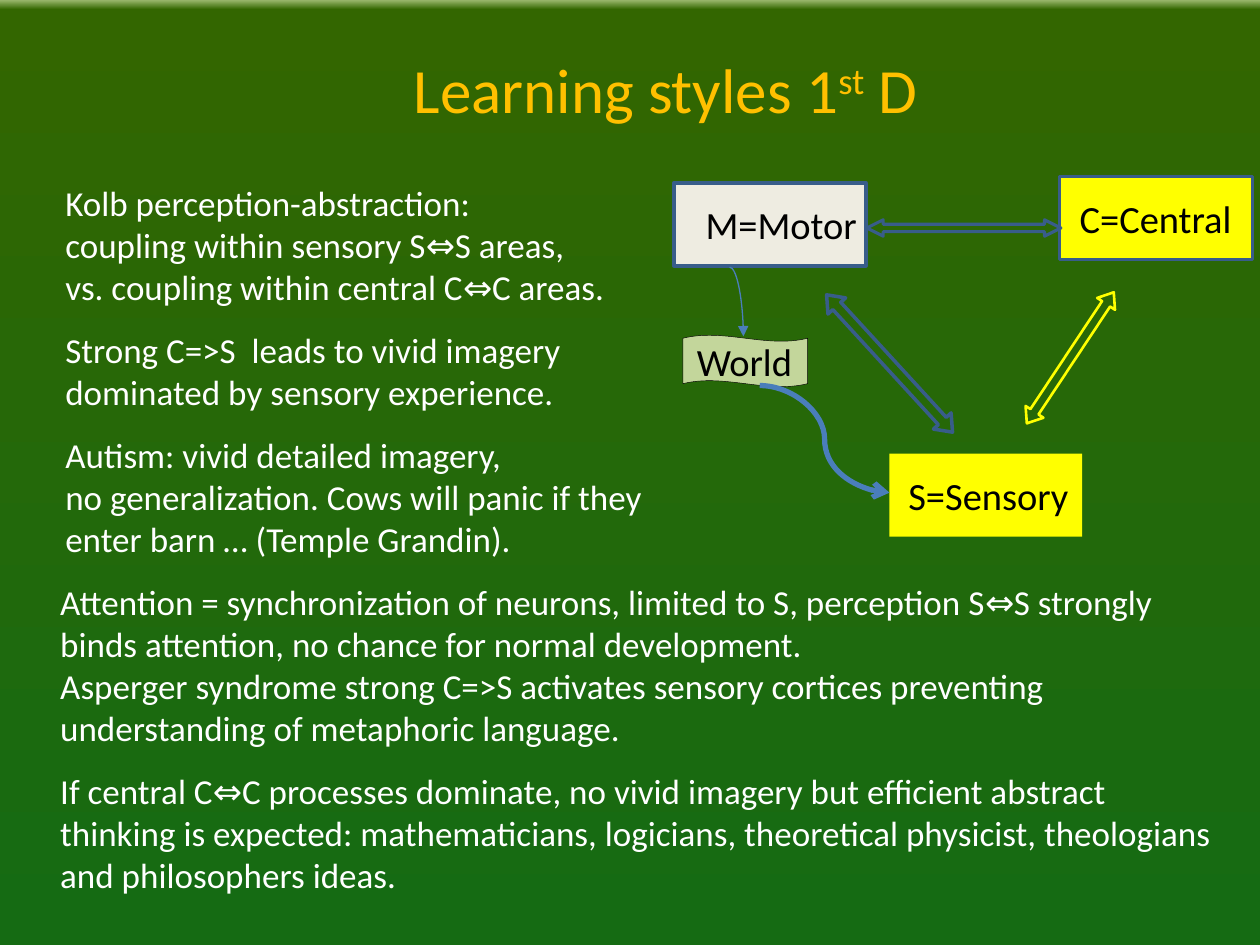
import math

from lxml import etree
from pptx import Presentation
from pptx.dml.color import RGBColor
from pptx.enum.shapes import MSO_CONNECTOR, MSO_SHAPE
from pptx.enum.text import MSO_ANCHOR, PP_ALIGN
from pptx.oxml.ns import qn
from pptx.util import Inches, Pt

RECTANGLE, WAVE = MSO_SHAPE.RECTANGLE, MSO_SHAPE.WAVE
DOUBLE_ARROW = MSO_SHAPE.LEFT_RIGHT_ARROW
CURVE = MSO_CONNECTOR.CURVE
MIDDLE, TOP = MSO_ANCHOR.MIDDLE, MSO_ANCHOR.TOP
LEFT, CENTER = PP_ALIGN.LEFT, PP_ALIGN.CENTER

FONT = "Calibri"
WHITE = RGBColor(0xFF, 0xFF, 0xFF)
BLACK = RGBColor(0x00, 0x00, 0x00)
GOLD = RGBColor(0xFF, 0xC0, 0x00)
YELLOW = RGBColor(0xFF, 0xFF, 0x00)
CREAM = RGBColor(0xEE, 0xEC, 0xE1)
SAGE = RGBColor(0xC3, 0xD6, 0x9B)
NAVY = RGBColor(0x38, 0x5D, 0x8A)
BLUE = RGBColor(0x4A, 0x7E, 0xBB)
BACKGROUND = [(0, "9CB86E"), (1, "336600"), (99, "156B13"), (100, "156B13")]

TITLE_BOX = (2.01, 0.28, 6.66, 0.84)
TITLE_RUNS = [("Learning styles 1", 0), ("st", 30000), (" D ", 0)]

# Box, then paragraphs made of lines
TEXTS = [
    ((0.42, 1.39, 4.92, 3.36), [
        ["Kolb perception-abstraction: ",
         "coupling within sensory S⇔S areas, ",
         "vs. coupling within central C⇔C areas."],
        ["Strong C=>S  leads to vivid imagery dominated by sensory experience."],
        ["Autism: vivid detailed imagery, ",
         "no generalization. Cows will panic if they",
         "enter barn … (Temple Grandin)."],
    ]),
    ((0.38, 4.56, 9.34, 2.93), [
        ["Attention = synchronization of neurons, limited to S, perception S⇔S "
         "strongly binds attention, no chance for normal development. ",
         "Asperger syndrome strong C=>S activates sensory cortices preventing "
         "understanding of metaphoric language."],
        ["If central C⇔C processes dominate, no vivid imagery but efficient abstract "
         "thinking is expected: mathematicians, logicians, theoretical physicist, "
         "theologians and philosophers ideas."],
    ]),
]

# Label, preset, box, left inset of the label, fill, line, line width
NODES = [
    ("S=Sensory", RECTANGLE, (7.06, 3.6, 1.53, 0.66), 0.15, YELLOW, None, 0),
    ("C=Central", RECTANGLE, (8.41, 1.4, 1.53, 0.66), 0.16, YELLOW, NAVY, 2),
    ("M=Motor", RECTANGLE, (5.35, 1.45, 1.52, 0.66), 0.25, CREAM, NAVY, 2.25),
    ("World", WAVE, (5.42, 2.66, 0.99, 0.41), 0.11, SAGE, BLACK, 0.25),
]

# Two tips, thickness, head length, line colour, line width
COUPLINGS = [
    ((8.15, 3.36), (8.84, 2.32), 0.17, 0.11, YELLOW, 1.5),
    ((6.56, 2.34), (7.56, 3.43), 0.19, 0.12, NAVY, 2),
    ((6.88, 1.81), (8.42, 1.81), 0.13, 0.13, NAVY, 1.75),
]

# Start, end, preset, arrowhead, line width
FLOWS = [
    ((5.79, 2.12), (5.9, 2.67), "curvedConnector2", "triangle", 0.75),
    ((6.03, 3.06), (7.06, 3.91), "curvedConnector3", "arrow", 3),
]


def inches(values):
    return [Inches(value) for value in values]


def add_run(paragraph, text, size, color):
    run = paragraph.add_run()
    run.text = text
    run.font.name, run.font.size = FONT, Pt(size)
    run.font.color.rgb = color
    return run


def add_text_box(slide, box, anchor):
    frame = slide.shapes.add_textbox(*inches(box)).text_frame
    frame.word_wrap = True
    frame.vertical_anchor = anchor
    return frame


def paint_background(slide):
    fill = slide.background.fill
    fill.gradient()
    fill.gradient_angle = 270
    stops = slide.background._cSld.find(".//" + qn("a:gsLst"))
    for stop in list(stops):
        stops.remove(stop)
    for percent, color in BACKGROUND:
        stop = etree.SubElement(stops, qn("a:gs"), pos=str(percent * 1000))
        etree.SubElement(stop, qn("a:srgbClr"), val=color)


def add_title(slide):
    paragraph = add_text_box(slide, TITLE_BOX, MIDDLE).paragraphs[0]
    paragraph.alignment = CENTER
    for text, baseline in TITLE_RUNS:
        run = add_run(paragraph, text, 36, GOLD)
        if baseline:
            run.font._element.set("baseline", str(baseline))


def add_text(slide, box, paragraphs):
    frame = add_text_box(slide, box, TOP)
    for index, lines in enumerate(paragraphs):
        paragraph = frame.add_paragraph() if index else frame.paragraphs[0]
        paragraph.space_after = Pt(12)
        for number, line in enumerate(lines):
            if number:
                paragraph.add_line_break()
            add_run(paragraph, line, 20, WHITE)


def add_node(slide, label, preset, box, inset, fill, line, width):
    shape = slide.shapes.add_shape(preset, *inches(box))
    shape.shadow.inherit = False
    if preset == WAVE:
        shape.adjustments[0] = 0.06
    shape.fill.solid()
    shape.fill.fore_color.rgb = fill
    if line is None:
        shape.line.fill.background()
    else:
        shape.line.color.rgb = line
        shape.line.width = Pt(width)
    frame = shape.text_frame
    frame.word_wrap = True
    frame.vertical_anchor = MIDDLE
    frame.margin_left = Inches(inset)
    frame.margin_right = frame.margin_top = frame.margin_bottom = 0
    frame.paragraphs[0].alignment = LEFT
    add_run(frame.paragraphs[0], label, 22, BLACK)


def add_coupling(slide, start, end, thickness, head, color, width):
    """Draw a hollow two-headed arrow from tip to tip."""
    length = math.dist(start, end)
    center_x, center_y = [(a + b) / 2 for a, b in zip(start, end)]
    box = (center_x - length / 2, center_y - thickness / 2, length, thickness)
    shape = slide.shapes.add_shape(DOUBLE_ARROW, *inches(box))
    shape.shadow.inherit = False
    shape.rotation = math.degrees(math.atan2(end[1] - start[1], end[0] - start[0]))
    shape.adjustments[0] = 0.45
    shape.adjustments[1] = head / thickness
    shape.fill.background()
    shape.line.color.rgb = color
    shape.line.width = Pt(width)


def add_flow(slide, start, end, preset, head, width):
    connector = slide.shapes.add_connector(CURVE, *inches(start + end))
    connector.line.color.rgb = BLUE
    connector.line.width = Pt(width)
    properties = connector._element.spPr
    properties.find(qn("a:prstGeom")).set("prst", preset)
    etree.SubElement(properties.find(qn("a:ln")), qn("a:tailEnd"), type=head)
    etree.SubElement(properties, qn("a:effectLst"))


def main():
    presentation = Presentation()
    presentation.slide_width, presentation.slide_height = Inches(10), Inches(7.5)
    slide = presentation.slides.add_slide(presentation.slide_layouts[6])
    paint_background(slide)
    add_title(slide)
    for node in NODES:
        add_node(slide, *node)
    for coupling in COUPLINGS:
        add_coupling(slide, *coupling)
    for flow in FLOWS:
        add_flow(slide, *flow)
    for text in TEXTS:
        add_text(slide, *text)
    presentation.save("out.pptx")


if __name__ == "__main__":
    main()
